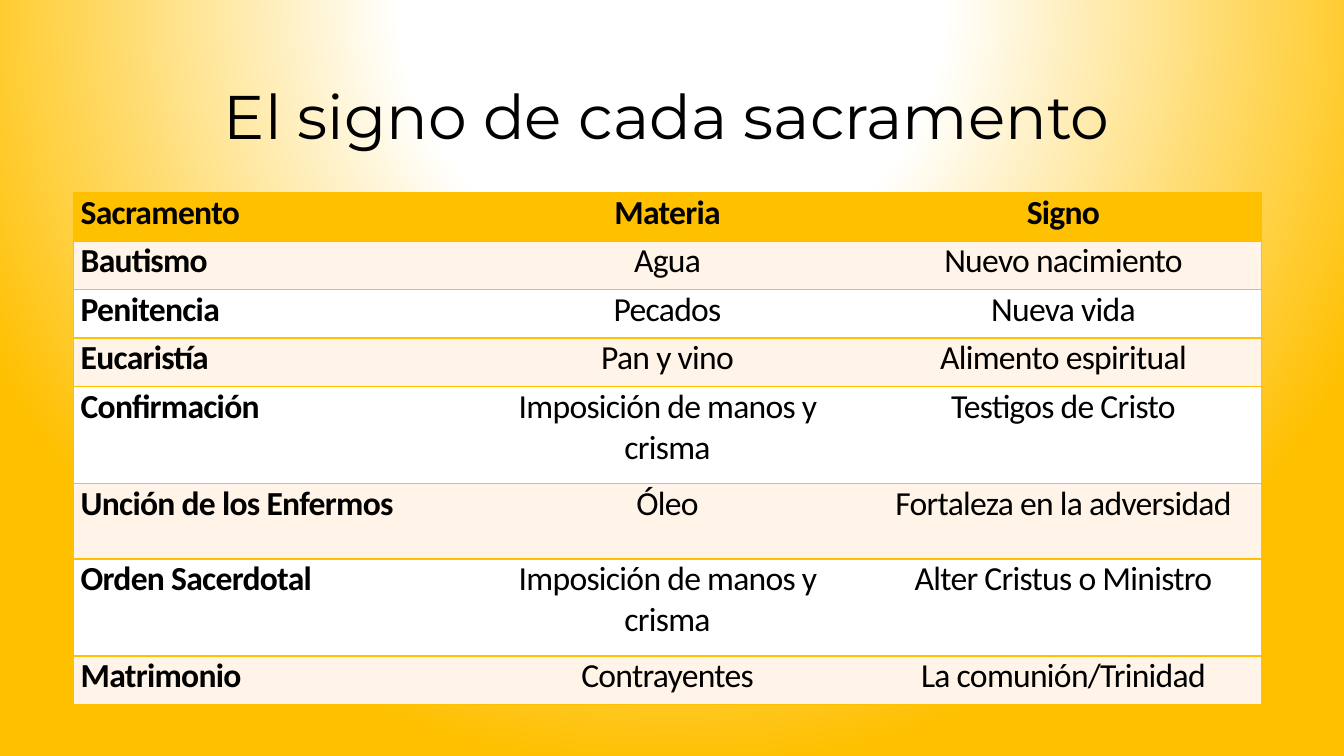
from lxml import etree
from pptx import Presentation
from pptx.dml.color import RGBColor
from pptx.enum.text import MSO_ANCHOR, PP_ALIGN
from pptx.oxml import parse_xml
from pptx.oxml.ns import nsdecls, qn
from pptx.util import Pt

CENTER, JUSTIFY = PP_ALIGN.CENTER, PP_ALIGN.JUSTIFY
MIDDLE = MSO_ANCHOR.MIDDLE

GOLD, CREAM, WHITE, BLACK = "FFC000", "FFF4E7", "FFFFFF", "000000"

TITLE_BOX = (62.6, 33.1, 828, 104.4)
TABLE_BOX = (52.6, 137.5, 848.4, 366.5)
ROW_HEIGHTS = [34.65, 34.65, 34.65, 34.65, 69.3, 54, 69.3, 34.65]
SACRAMENTS = [
    ("Sacramento", "Materia", "Signo"),
    ("Bautismo", "Agua", "Nuevo nacimiento"),
    ("Penitencia", "Pecados", "Nueva vida"),
    ("Eucaristía", "Pan y vino", "Alimento espiritual"),
    ("Confirmación", "Imposición de manos y crisma", "Testigos de Cristo"),
    ("Unción de los Enfermos", "Óleo", "Fortaleza en la adversidad"),
    ("Orden Sacerdotal", "Imposición de manos y crisma", "Alter Cristus o Ministro"),
    ("Matrimonio", "Contrayentes", "La comunión/Trinidad"),
]


def color(hex_value):
    return RGBColor.from_string(hex_value)


def format_text(paragraph, font_name, size, align, bold=False):
    paragraph.alignment = align
    for run in paragraph.runs:
        run.font.name = font_name
        run.font.size = Pt(size)
        run.font.bold = bold
        run.font.color.rgb = color(BLACK)


def paint_background(slide):
    """Radial glow centred above the slide."""
    slide.background.fill.solid()
    properties = slide.element.find(".//" + qn("p:bgPr"))
    stops = "".join(
        f'<a:gs pos="{percent * 1000}"><a:srgbClr val="{shade}"/></a:gs>'
        for percent, shade in ((0, WHITE), (35, WHITE), (100, GOLD))
    )
    glow = parse_xml(
        f'<a:gradFill {nsdecls("a")} rotWithShape="1"><a:gsLst>{stops}</a:gsLst>'
        '<a:path path="circle"><a:fillToRect l="50000" t="-80000" r="50000" b="180000"/>'
        "</a:path></a:gradFill>"
    )
    properties.replace(properties.find(qn("a:solidFill")), glow)


def add_title(slide, box):
    title = slide.shapes.title
    title.left, title.top, title.width, title.height = map(Pt, box)
    frame = title.text_frame
    frame.text = "El signo de cada sacramento"
    frame.word_wrap = True
    frame.vertical_anchor = MIDDLE
    heading = frame.paragraphs[0]
    heading.line_spacing = 0.9
    format_text(heading, "Montserrat", 44, CENTER)


def set_borders(cell, visible_sides):
    """Gold lines on the visible sides, nothing on the others."""
    properties = cell._tc.get_or_add_tcPr()
    for side in "LRTB":
        line = etree.SubElement(properties, qn(f"a:ln{side}"), w=str(Pt(1)))
        if side in visible_sides:
            fill = etree.SubElement(line, qn("a:solidFill"))
            etree.SubElement(fill, qn("a:srgbClr"), val=GOLD)
        else:
            etree.SubElement(line, qn("a:noFill"))


def format_cell(cell, text, row, column):
    cell.margin_left = cell.margin_right = Pt(5)
    cell.margin_top = cell.margin_bottom = 0
    set_borders(cell, ("LTB", "TB", "RTB")[column])
    cell.fill.solid()
    cell.fill.fore_color.rgb = color(GOLD if row == 0 else CREAM if row % 2 else WHITE)
    cell.text_frame.text = text
    paragraph = cell.text_frame.paragraphs[0]
    align = JUSTIFY if column == 0 else CENTER
    format_text(paragraph, "Calibri", 24, align, bold=row == 0 or column == 0)
    for run in paragraph.runs:
        run.font._element.set("spc", "-50")


def add_sacrament_table(slide, box):
    left, top, width, height = box
    column_count = len(SACRAMENTS[0])
    table = slide.shapes.add_table(
        len(SACRAMENTS), column_count, Pt(left), Pt(top), Pt(width), Pt(height)
    ).table
    table.first_row = table.horz_banding = False
    for column in table.columns:
        column.width = Pt(width / column_count)
    for row, (texts, row_height) in enumerate(zip(SACRAMENTS, ROW_HEIGHTS)):
        table.rows[row].height = Pt(row_height)
        for column, text in enumerate(texts):
            format_cell(table.cell(row, column), text, row, column)


def main():
    presentation = Presentation()
    presentation.slide_width, presentation.slide_height = Pt(960), Pt(540)
    slide = presentation.slides.add_slide(presentation.slide_layouts[5])
    paint_background(slide)
    add_title(slide, TITLE_BOX)
    add_sacrament_table(slide, TABLE_BOX)
    presentation.save("out.pptx")


if __name__ == "__main__":
    main()
